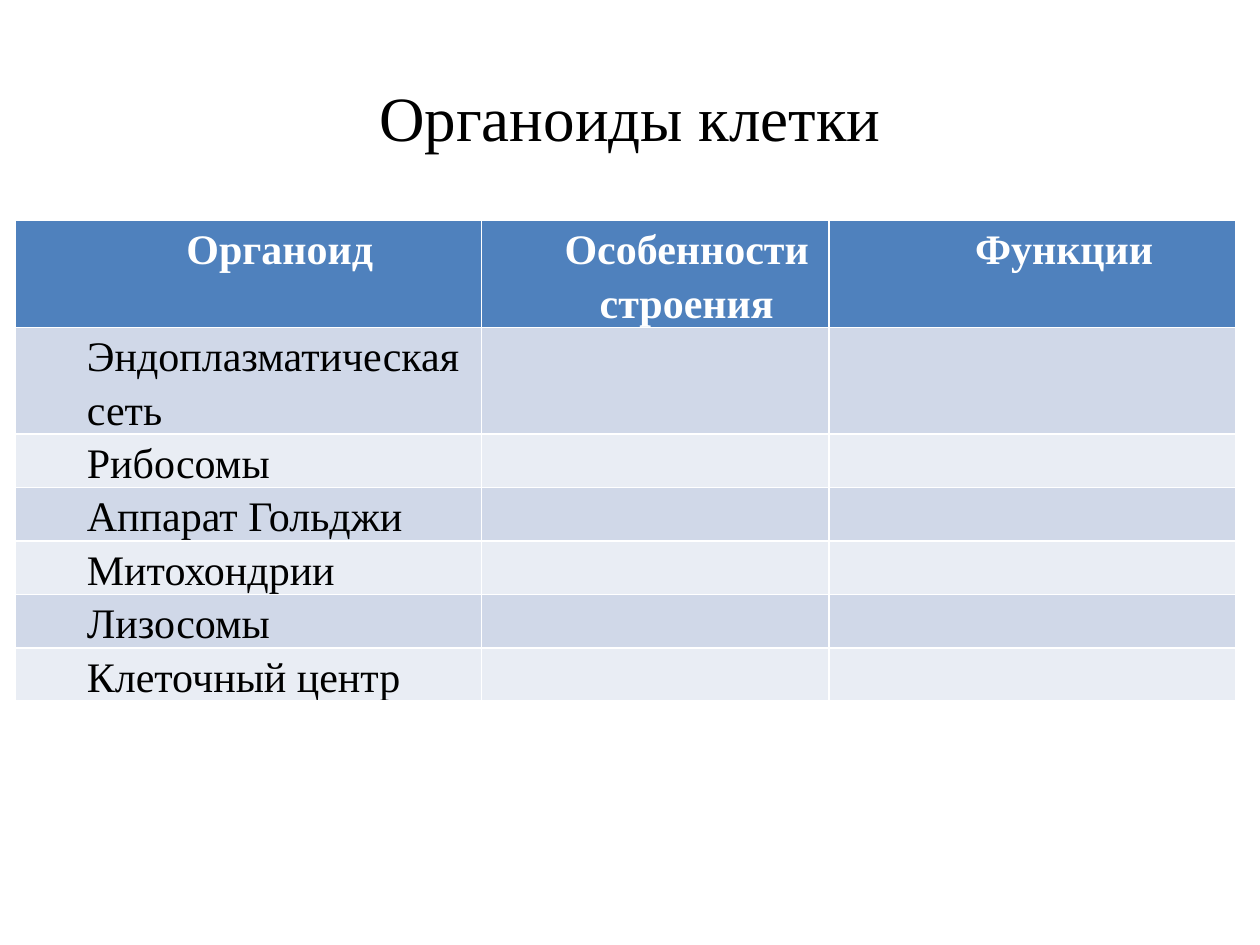
from pptx import Presentation
from pptx.dml.color import RGBColor
from pptx.enum.text import MSO_ANCHOR, PP_ALIGN
from pptx.util import Inches, Pt

BLACK = RGBColor(0x00, 0x00, 0x00)
WHITE = RGBColor(0xFF, 0xFF, 0xFF)
HEADER_BLUE = RGBColor(0x4F, 0x81, 0xBD)
BAND_DARK = RGBColor(0xD0, 0xD8, 0xE8)
BAND_LIGHT = RGBColor(0xE9, 0xED, 0xF4)
FONT = "Times New Roman"

HEADERS = ["Органоид", "Особенности строения", "Функции"]
ORGANELLES = ["Эндоплазматическая сеть", "Рибосомы", "Аппарат Гольджи",
              "Митохондрии", "Лизосомы", "Клеточный центр"]
COLUMN_WIDTHS = [3.7, 2.76, 3.23]
ROW_HEIGHT = 0.41


def set_all(target, values):
    for name, value in values.items():
        setattr(target, name, value)


def write_text(para, text, size, color, bold=False):
    span = para.add_run()
    span.text = text
    set_all(span.font, {"name": FONT, "size": Pt(size), "bold": bold})
    span.font.color.rgb = color


deck = Presentation()
set_all(deck, {"slide_width": Inches(10), "slide_height": Inches(7.5)})
page = deck.slides.add_slide(deck.slide_layouts[5])

# Title
title = page.shapes.title
set_all(title, {"left": Inches(0.5), "top": Inches(0.3),
                "width": Inches(9), "height": Inches(1.25)})
title.text_frame.vertical_anchor = MSO_ANCHOR.MIDDLE
title_para = title.text_frame.paragraphs[0]
title_para.alignment = PP_ALIGN.CENTER
write_text(title_para, "Органоиды клетки", 36, BLACK)

# Table grid; the built-in style supplies the white rules
rows = [HEADERS] + [[name, "", ""] for name in ORGANELLES]
frame = page.shapes.add_table(len(rows), len(HEADERS), Inches(0.12), Inches(1.75),
                              Inches(sum(COLUMN_WIDTHS)), Inches(4.34))
table = frame.table
for column, width in zip(table.columns, COLUMN_WIDTHS):
    column.width = Inches(width)
for row in table.rows:
    row.height = Inches(ROW_HEIGHT)
frame.height = Inches(4.34)

# Cells: header row, then alternating bands
for r, texts in enumerate(rows):
    is_header = r == 0
    band = HEADER_BLUE if is_header else BAND_DARK if r % 2 else BAND_LIGHT
    if is_header:
        alignment = PP_ALIGN.CENTER
    else:
        alignment = PP_ALIGN.LEFT if r == 1 else PP_ALIGN.JUSTIFY
    for c, text in enumerate(texts):
        cell = table.cell(r, c)
        cell.fill.solid()
        cell.fill.fore_color.rgb = band
        if not text:
            continue
        set_all(cell, {"margin_left": Inches(0.07), "margin_right": Inches(0.07),
                       "margin_top": 0, "margin_bottom": 0})
        para = cell.text_frame.paragraphs[0]
        set_all(para, {"alignment": alignment, "line_spacing": 1.15})
        # Left indent of the paragraph
        indent = para._p.get_or_add_pPr()
        indent.set("marL", str(Inches(0.5)))
        indent.set("indent", "0")
        write_text(para, text, 24, WHITE if is_header else BLACK, is_header)

deck.save("out.pptx")
